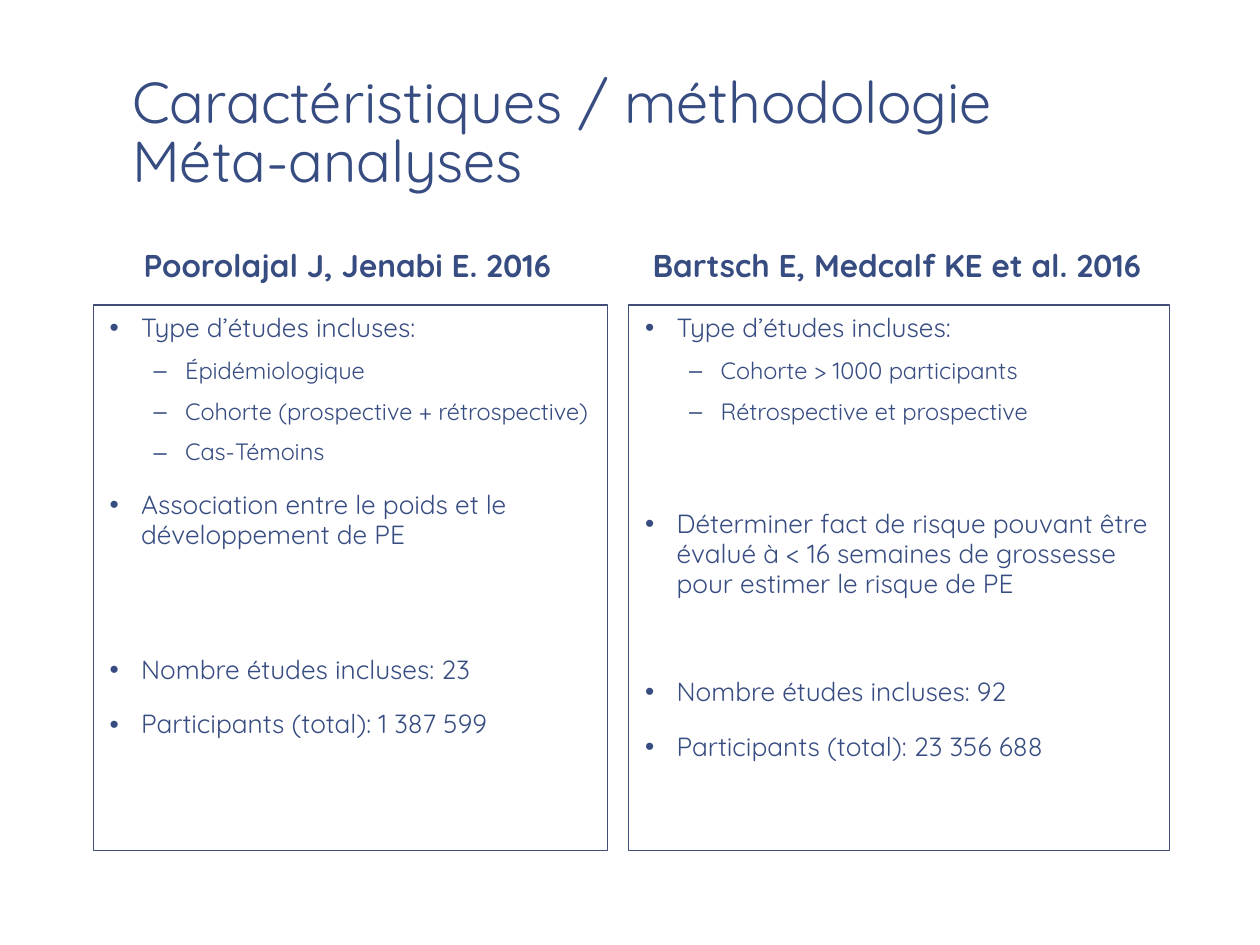
from dataclasses import dataclass

from lxml import etree
from pptx import Presentation
from pptx.dml.color import RGBColor
from pptx.enum.shapes import MSO_SHAPE
from pptx.enum.text import MSO_ANCHOR, PP_ALIGN
from pptx.oxml.ns import qn
from pptx.util import Inches, Pt

RECTANGLE = MSO_SHAPE.RECTANGLE
TOP, BOTTOM = MSO_ANCHOR.TOP, MSO_ANCHOR.BOTTOM
LEFT = PP_ALIGN.LEFT


@dataclass(frozen=True)
class Theme:
    font: str = "Quicksand"
    ink: RGBColor = RGBColor(0x37, 0x4C, 0x81)
    border: RGBColor = RGBColor(0x41, 0x4E, 0x77)
    title: float = 33
    heading: float = 18
    levels: tuple = (15, 13.5)


THEME = Theme()
BULLETS = (("•", 0.25), ("–", 0.6))
HANGING = 0.25


def prepare_frame(frame, anchor):
    frame.word_wrap = True
    frame.vertical_anchor = anchor
    frame.margin_left = frame.margin_right = Inches(0.13)
    frame.margin_top = frame.margin_bottom = Inches(0.07)


def style_paragraph(paragraph, size, line_spacing, bold=False):
    paragraph.alignment = LEFT
    paragraph.line_spacing = line_spacing
    paragraph.font.name = THEME.font
    paragraph.font.size = Pt(size)
    paragraph.font.bold = bold
    paragraph.font.color.rgb = THEME.ink


studies = [
    {
        "heading": ("Poorolajal J, Jenabi E. 2016", 1.01, 3.54),
        "panel": (0.74, 4.08),
        "points": [
            (0, 0, "Type d’études incluses:"),
            (1, 8, "Épidémiologique"),
            (1, 8, "Cohorte (prospective + rétrospective)"),
            (1, 8, "Cas-Témoins"),
            (0, 14, "Association entre le poids et le développement de PE"),
            (0, 60, "Nombre études incluses: 23"),
            (0, 14, "Participants (total): 1 387 599"),
        ],
    },
    {
        "heading": ("Bartsch E, Medcalf KE et al. 2016", 5.05, 4.17),
        "panel": (4.99, 4.29),
        "points": [
            (0, 0, "Type d’études incluses:"),
            (1, 8, "Cohorte > 1000 participants"),
            (1, 8, "Rétrospective et prospective"),
            (0, 48, "Déterminer fact de risque pouvant être évalué à < 16 semaines "
                    "de grossesse pour estimer le risque de PE"),
            (0, 45, "Nombre études incluses: 92"),
            (0, 14, "Participants (total): 23 356 688"),
        ],
    },
]

prs = Presentation()
prs.slide_width, prs.slide_height = Inches(10), Inches(7.5)
slide = prs.slides.add_slide(prs.slide_layouts[6])

title = slide.shapes.add_textbox(Inches(0.92), Inches(0.08), Inches(8.33), Inches(1.53))
prepare_frame(title.text_frame, BOTTOM)
title.text_frame.text = "Caractéristiques / méthodologie\vMéta-analyses"
style_paragraph(title.text_frame.paragraphs[0], THEME.title, 0.85)

for study in studies:
    authors, left, width = study["heading"]
    heading = slide.shapes.add_textbox(Inches(left), Inches(1.77), Inches(width), Inches(0.56))
    prepare_frame(heading.text_frame, BOTTOM)
    heading.text_frame.text = authors
    style_paragraph(heading.text_frame.paragraphs[0], THEME.heading, 0.95, bold=True)

    left, width = study["panel"]
    panel = slide.shapes.add_shape(
        RECTANGLE, Inches(left), Inches(2.42), Inches(width), Inches(4.33))
    panel.shadow.inherit = False
    panel.fill.background()
    panel.line.color.rgb = THEME.border
    panel.line.width = Pt(0.75)
    prepare_frame(panel.text_frame, TOP)

    for index, (level, space_before, wording) in enumerate(study["points"]):
        frame = panel.text_frame
        point = frame.add_paragraph() if index else frame.paragraphs[0]
        point.text = wording
        point.level = level
        point.space_before = Pt(space_before)
        symbol, indent = BULLETS[level]
        properties = point._p.get_or_add_pPr()
        properties.set("marL", str(Inches(indent)))
        properties.set("indent", str(-Inches(HANGING)))
        etree.SubElement(properties, qn("a:buFont"), typeface="Arial")
        etree.SubElement(properties, qn("a:buChar"), char=symbol)
        style_paragraph(point, THEME.levels[level], 0.95)

prs.save("out.pptx")
